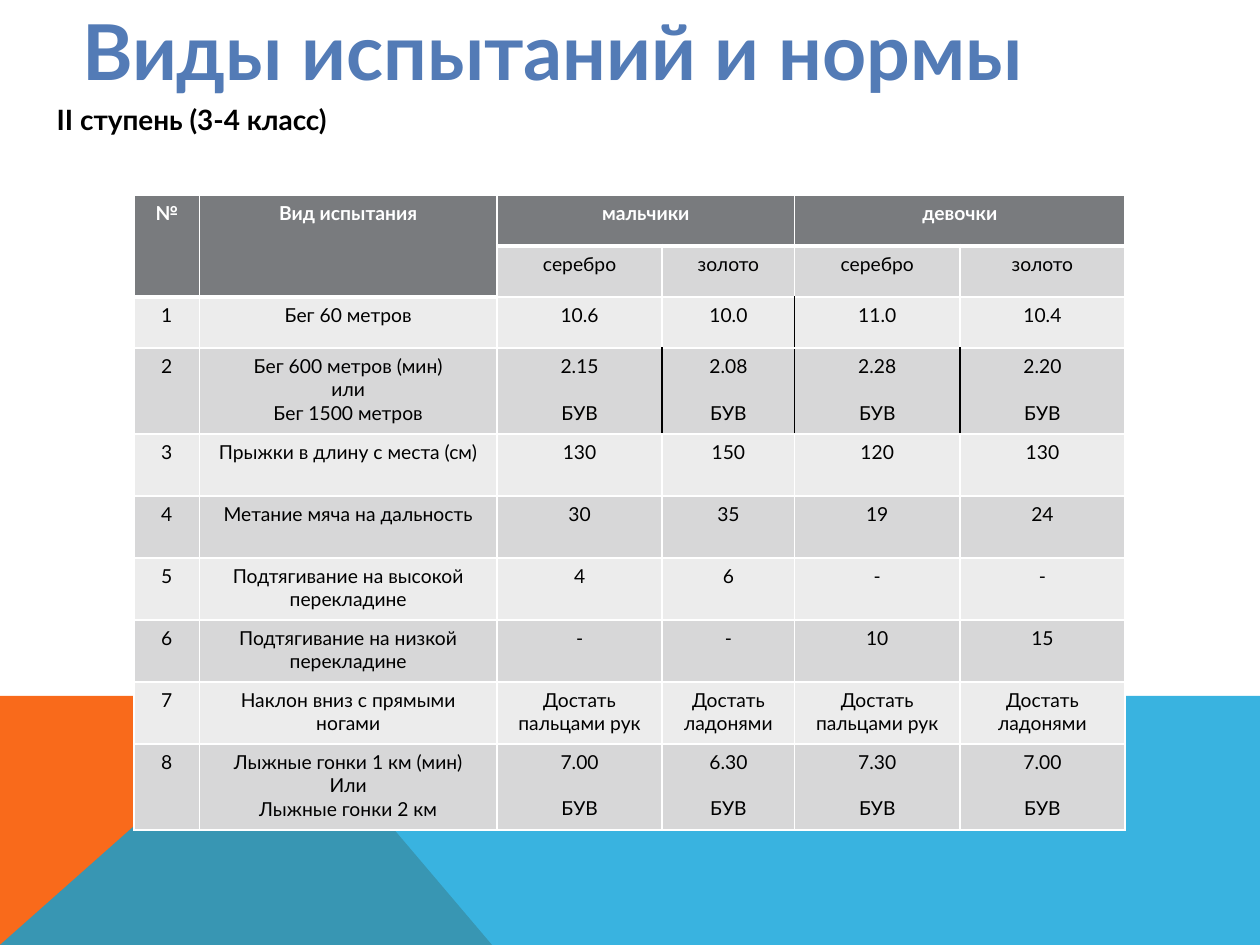
from lxml import etree
from pptx import Presentation
from pptx.dml.color import RGBColor
from pptx.enum.text import MSO_ANCHOR, MSO_AUTO_SIZE, PP_ALIGN
from pptx.oxml.ns import qn
from pptx.util import Cm, Pt

LEFT, CENTER = PP_ALIGN.LEFT, PP_ALIGN.CENTER
TOP, MIDDLE = MSO_ANCHOR.TOP, MSO_ANCHOR.MIDDLE
NO_AUTOFIT = MSO_AUTO_SIZE.NONE

WHITE = RGBColor(0xFF, 0xFF, 0xFF)
BLACK = RGBColor(0x00, 0x00, 0x00)
BLUE = RGBColor(0x53, 0x7B, 0xB6)
ORANGE = RGBColor(0xF9, 0x6A, 0x1B)
SKY = RGBColor(0x08, 0xA1, 0xD9)
HEADER = RGBColor(0x79, 0x7B, 0x7E)
DARK_BAND = RGBColor(0xD7, 0xD7, 0xD8)
LIGHT_BAND = RGBColor(0xEC, 0xEC, 0xEC)

FONT = "Lato"
TABLE_SIZE = 11
BLANK_LINE = 13.2

COLUMN_WIDTHS = [1.32, 6, 3.33, 2.67, 3.33, 3.33]
ROW_HEIGHTS = [1.03] * 3 + [1.73] + [1.25] * 5 + [1.73]
HEADER_ROWS = 2
HEADER_SPANS = [((0, 0), (1, 0)), ((0, 1), (1, 1)), ((0, 2), (0, 3)), ((0, 4), (0, 5))]
# Cells, as (row, column), whose right edge is black
BLACK_EDGES = {(2, 3), (3, 2), (3, 3), (3, 4)}

NORMS = [
    ["№", "Вид испытания", "мальчики", "", "девочки", ""],
    ["", "", "серебро", "золото", "серебро", "золото"],
    ["1", "Бег 60 метров", "10.6", "10.0", "11.0", "10.4"],
    ["2", "Бег 600 метров (мин)\nили\nБег 1500 метров",
     "2.15\nБУВ", "2.08\nБУВ", "2.28\nБУВ", "2.20\nБУВ"],
    ["3", "Прыжки в длину с места (см)", "130", "150", "120", "130"],
    ["4", "Метание мяча на дальность", "30", "35", "19", "24"],
    ["5", "Подтягивание на высокой перекладине", "4", "6", "-", "-"],
    ["6", "Подтягивание на низкой перекладине", "-", "-", "10", "15"],
    ["7", "Наклон вниз с прямыми ногами", "Достать пальцами рук",
     "Достать ладонями", "Достать пальцами рук", "Достать ладонями"],
    ["8", "Лыжные гонки 1 км (мин)\nИли\nЛыжные гонки 2 км",
     "7.00\nБУВ", "6.30\nБУВ", "7.30\nБУВ", "7.00\nБУВ"],
]


def write(frame, text, size=TABLE_SIZE, color=BLACK, bold=False, align=CENTER,
          first_gap=0, line_gap=0):
    """Fill a text frame, one paragraph a line; gaps are points before a paragraph."""
    for index, line in enumerate(text.split("\n")):
        para = frame.add_paragraph() if index else frame.paragraphs[0]
        para.alignment = align
        para.space_before = Pt(line_gap if index else first_gap)
        span = para.add_run()
        span.text = line
        span.font.name = FONT
        span.font.size = Pt(size)
        span.font.bold = bold
        span.font.color.rgb = color


def is_header(row, column):
    return row == 0 or (row < HEADER_ROWS and column < 2)


def has_heavy_bottom(row, column):
    """The thick rule runs under the last header row of each column."""
    return row == (1 if column < 2 else 0)


def set_borders(cell, edges):
    """Take edges in the order left, right, top, bottom as (colour, points)."""
    properties = cell._tc.get_or_add_tcPr()
    for index, (tag, (color, width)) in enumerate(zip(("lnL", "lnR", "lnT", "lnB"), edges)):
        line = etree.Element(qn(f"a:{tag}"), w=str(Pt(width)))
        fill = etree.SubElement(line, qn("a:solidFill"))
        etree.SubElement(fill, qn("a:srgbClr"), val=str(color))
        properties.insert(index, line)


class SlideBuilder:
    def __init__(self, page):
        self.page = page
        self.title_box, self.body_box = page.placeholders[0], page.placeholders[1]

    def backdrop(self, points, color, opacity=100):
        """Add a polygon behind the placeholders."""
        corners = [(Cm(x), Cm(y)) for x, y in points]
        builder = self.page.shapes.build_freeform(*corners[0], scale=1.0)
        builder.add_line_segments(corners[1:], close=True)
        shape = builder.convert_to_shape()
        shape.shadow.inherit = False
        shape.fill.solid()
        shape.fill.fore_color.rgb = color
        shape.line.fill.background()
        if opacity < 100:
            tint = shape.element.spPr.find(qn("a:solidFill"))[0]
            etree.SubElement(tint, qn("a:alpha"), val=str(opacity * 1000))
        self.title_box.element.addprevious(shape.element)

    def placeholder(self, box, bounds, text, anchor, **style):
        box.left, box.top, box.width, box.height = map(Cm, bounds)
        frame = box.text_frame
        frame.word_wrap = True
        frame.auto_size = NO_AUTOFIT
        frame.vertical_anchor = anchor
        write(frame, text, bold=True, align=LEFT, **style)

    def title(self, text, bounds):
        self.placeholder(self.title_box, bounds, text, MIDDLE, size=44, color=BLUE)

    def subtitle(self, text, bounds):
        self.placeholder(self.body_box, bounds, text, TOP, size=16, first_gap=8)
        for para in self.body_box.text_frame.paragraphs:
            properties = para._p.get_or_add_pPr()
            properties.set("marL", str(Cm(0.97)))
            properties.set("indent", str(Cm(-0.97)))
            etree.SubElement(properties, qn("a:buNone"))

    def norms_table(self, left, top):
        frame = self.page.shapes.add_table(
            len(ROW_HEIGHTS), len(COLUMN_WIDTHS), Cm(left), Cm(top),
            Cm(sum(COLUMN_WIDTHS)), Cm(sum(ROW_HEIGHTS)))
        table = frame.table
        for column, width in zip(table.columns, COLUMN_WIDTHS):
            column.width = Cm(width)
        for row, height in zip(table.rows, ROW_HEIGHTS):
            row.height = Cm(height)
        for first, last in HEADER_SPANS:
            table.cell(*first).merge(table.cell(*last))
        for row, texts in enumerate(NORMS):
            for column, text in enumerate(texts):
                self.norm_cell(table.cell(row, column), row, column, text)

    def norm_cell(self, cell, row, column, text):
        header = is_header(row, column)
        cell.fill.solid()
        band = DARK_BAND if row % 2 else LIGHT_BAND
        cell.fill.fore_color.rgb = HEADER if header else band
        set_borders(cell, [
            (BLACK if (row, column - 1) in BLACK_EDGES else WHITE, 1),
            (BLACK if (row, column) in BLACK_EDGES else WHITE, 1),
            (WHITE, 3 if has_heavy_bottom(row - 1, column) else 1),
            (WHITE, 3 if has_heavy_bottom(row, column) else 1)])
        if text:
            write(cell.text_frame, text, color=WHITE if header else BLACK,
                  bold=header, line_gap=BLANK_LINE if column > 1 else 0)


def main():
    deck = Presentation()
    deck.slide_width, deck.slide_height = Cm(25.4), Cm(19.05)
    builder = SlideBuilder(deck.slides.add_slide(deck.slide_layouts[1]))
    builder.backdrop([(0, 19.05), (0, 14.03), (5.66, 14.03), (9.92, 19.05)], ORANGE)
    builder.backdrop([(0, 19.05), (5.66, 14.03), (25.4, 14.03), (25.4, 19.05)], SKY, opacity=80)
    builder.title("Виды испытаний и нормы", (1.4, -0.58, 20.12, 3.18))
    builder.subtitle("II ступень (3-4 класс)", (0.89, 1.93, 20.19, 14.71))
    builder.norms_table(2.7, 3.93)
    deck.save("out.pptx")


if __name__ == "__main__":
    main()
